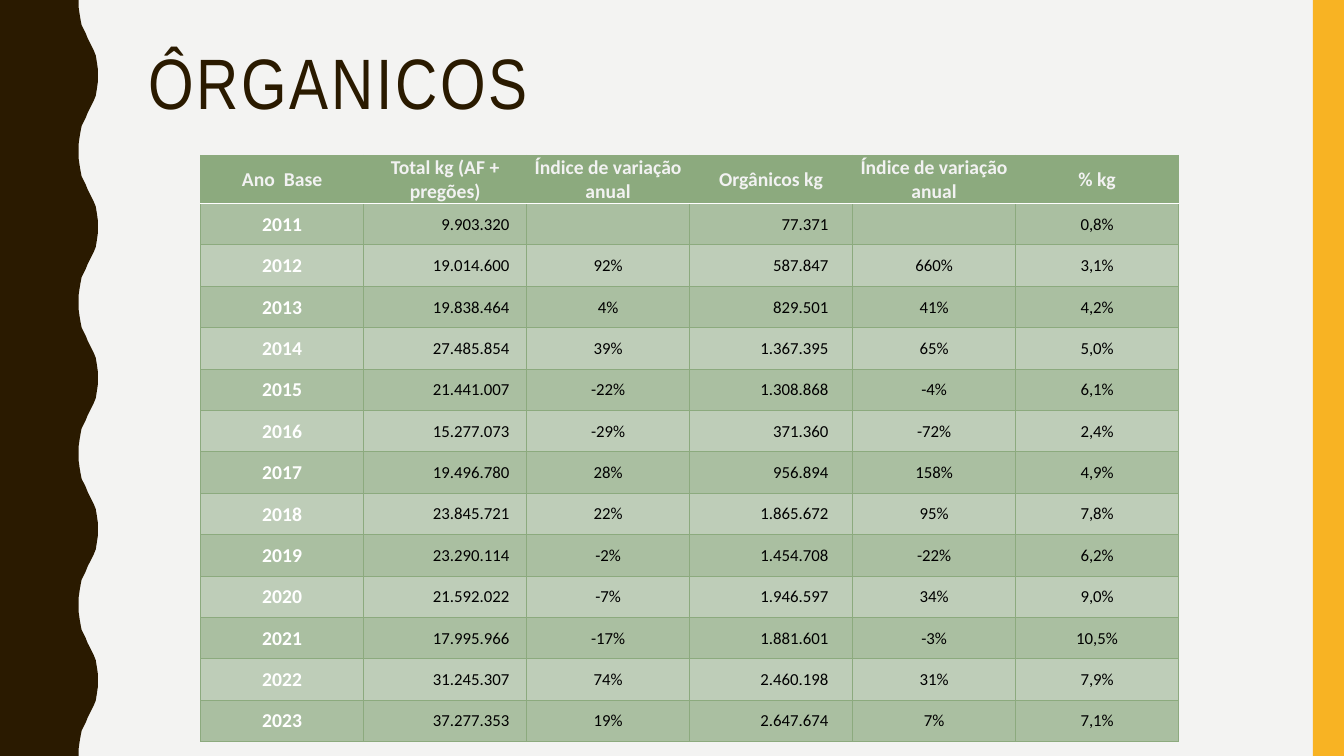
from lxml import etree
from pptx import Presentation
from pptx.dml.color import RGBColor
from pptx.enum.shapes import MSO_SHAPE
from pptx.enum.text import MSO_ANCHOR, PP_ALIGN
from pptx.oxml.ns import qn
from pptx.util import Inches, Pt

RECTANGLE = MSO_SHAPE.RECTANGLE
MIDDLE = MSO_ANCHOR.MIDDLE
LEFT, CENTER, RIGHT = PP_ALIGN.LEFT, PP_ALIGN.CENTER, PP_ALIGN.RIGHT

WIDTH, HEIGHT = 13.33, 7.5
COLORS = {
    "background": "F3F3F2", "brown": "2A1A00", "yellow": "F8B323",
    "green": "8CAA7E", "dark_band": "AABFA1", "light_band": "BECDB8",
    "header_text": "F2F2F2", "white": "FFFFFF", "black": "000000",
}
FORMATS = {
    "title": {"name": "Arial Narrow", "size": Pt(51), "bold": False},
    "strong": {"name": "Calibri", "size": Pt(14), "bold": True},
    "value": {"name": "Calibri", "size": Pt(12), "bold": False},
}
NUMBER_INDENTS = {1: 0.17, 3: 0.24}

WAVE_PERIOD = 1.5
WAVE_HALF = [
    (0.78, 0), (0.78, 0.07), (0.79, 0.14), (0.8, 0.2), (0.81, 0.25),
    (0.83, 0.29), (0.85, 0.33), (0.87, 0.38), (0.89, 0.42), (0.91, 0.46),
    (0.93, 0.5), (0.95, 0.55), (0.96, 0.61), (0.97, 0.68), (0.97, 0.75),
]

HEADERS = ["Ano  Base", "Total kg (AF + pregões)", "Índice de variação anual",
           "Orgânicos kg", "Índice de variação anual", "% kg"]
RECORDS = [
    ["2011", "9.903.320", "", "77.371", "", "0,8%"],
    ["2012", "19.014.600", "92%", "587.847", "660%", "3,1%"],
    ["2013", "19.838.464", "4%", "829.501", "41%", "4,2%"],
    ["2014", "27.485.854", "39%", "1.367.395", "65%", "5,0%"],
    ["2015", "21.441.007", "-22%", "1.308.868", "-4%", "6,1%"],
    ["2016", "15.277.073", "-29%", "371.360", "-72%", "2,4%"],
    ["2017", "19.496.780", "28%", "956.894", "158%", "4,9%"],
    ["2018", "23.845.721", "22%", "1.865.672", "95%", "7,8%"],
    ["2019", "23.290.114", "-2%", "1.454.708", "-22%", "6,2%"],
    ["2020", "21.592.022", "-7%", "1.946.597", "34%", "9,0%"],
    ["2021", "17.995.966", "-17%", "1.881.601", "-3%", "10,5%"],
    ["2022", "31.245.307", "74%", "2.460.198", "31%", "7,9%"],
    ["2023", "37.277.353", "19%", "2.647.674", "7%", "7,1%"],
]


class SlideBuilder:
    def __init__(self, page):
        self.page = page

    def paint(self, fill, color):
        fill.solid()
        fill.fore_color.rgb = RGBColor.from_string(COLORS[color])

    def finish(self, shape, color):
        shape.shadow.inherit = False
        self.paint(shape.fill, color)
        shape.line.fill.background()

    def background(self, color):
        self.paint(self.page.background.fill, color)

    def bar(self, left, top, width, height, color):
        shape = self.page.shapes.add_shape(
            RECTANGLE, Inches(left), Inches(top), Inches(width), Inches(height))
        self.finish(shape, color)

    def wavy_edge(self, color):
        bend = WAVE_HALF + [(x, WAVE_PERIOD - y) for x, y in WAVE_HALF[-2::-1]]
        waves = int(HEIGHT / WAVE_PERIOD)
        edge = [(Inches(x), Inches(y + wave * WAVE_PERIOD))
                for wave in range(waves) for x, y in bend]
        outline = self.page.shapes.build_freeform(0, 0)
        outline.add_line_segments(edge + [(0, Inches(HEIGHT))], close=True)
        self.finish(outline.convert_to_shape(), color)

    def add_text(self, para, text, style, color, align):
        para.alignment = align
        span = para.add_run()
        span.text = text
        for attribute, value in FORMATS[style].items():
            setattr(span.font, attribute, value)
        span.font.color.rgb = RGBColor.from_string(COLORS[color])
        return span

    def title(self, text, left, top, width, height):
        box = self.page.shapes.add_textbox(
            Inches(left), Inches(top), Inches(width), Inches(height))
        frame = box.text_frame
        frame.word_wrap = True
        frame.vertical_anchor = MIDDLE
        para = frame.paragraphs[0]
        para.line_spacing = 0.9
        span = self.add_text(para, text, "title", "brown", LEFT)
        span.font._element.set("spc", "200")

    def border(self, cell, side, color, points):
        properties = cell._tc.get_or_add_tcPr()
        line = etree.SubElement(properties, qn(f"a:ln{side}"), w=str(Pt(points)))
        solid = etree.SubElement(line, qn("a:solidFill"))
        etree.SubElement(solid, qn("a:srgbClr"), val=COLORS[color])

    def cell(self, cell, text, row, column):
        indent = NUMBER_INDENTS.get(column, 0.01) if row else 0.01
        margins = {"left": 0.01, "top": 0.01, "right": indent, "bottom": 0}
        for side, margin in margins.items():
            setattr(cell, f"margin_{side}", Inches(margin))
        cell.vertical_anchor = MIDDLE
        for side in "LRTB":
            under_header = (row, side) in ((0, "B"), (1, "T"))
            self.border(cell, side, *(("white", 1) if under_header else ("green", 0.5)))
        if row == 0:
            fill, style, color = "green", "strong", "header_text"
        else:
            fill = "dark_band" if row % 2 else "light_band"
            style, color = ("value", "black") if column else ("strong", "white")
        self.paint(cell.fill, fill)
        if text:
            align = RIGHT if row and column in NUMBER_INDENTS else CENTER
            self.add_text(cell.text_frame.paragraphs[0], text, style, color, align)

    def table(self, records, left, top, width, height):
        rows, columns = len(records), len(records[0])
        table = self.page.shapes.add_table(
            rows, columns, Inches(left), Inches(top), Inches(width), Inches(height)).table
        table.first_row = table.horz_banding = False
        for row, record in enumerate(records):
            for column, text in enumerate(record):
                self.cell(table.cell(row, column), text, row, column)


def main():
    deck = Presentation()
    deck.slide_width, deck.slide_height = Inches(WIDTH), Inches(HEIGHT)
    builder = SlideBuilder(deck.slides.add_slide(deck.slide_layouts[6]))
    builder.background("background")
    builder.wavy_edge("brown")
    builder.bar(13.02, 0, 0.31, HEIGHT, "yellow")
    builder.title("ÔRGANICOS", 1.37, 0.42, 11.13, 0.88)
    builder.table([HEADERS] + RECORDS, 1.99, 1.54, 9.7, 5.75)
    deck.save("out.pptx")


if __name__ == "__main__":
    main()
